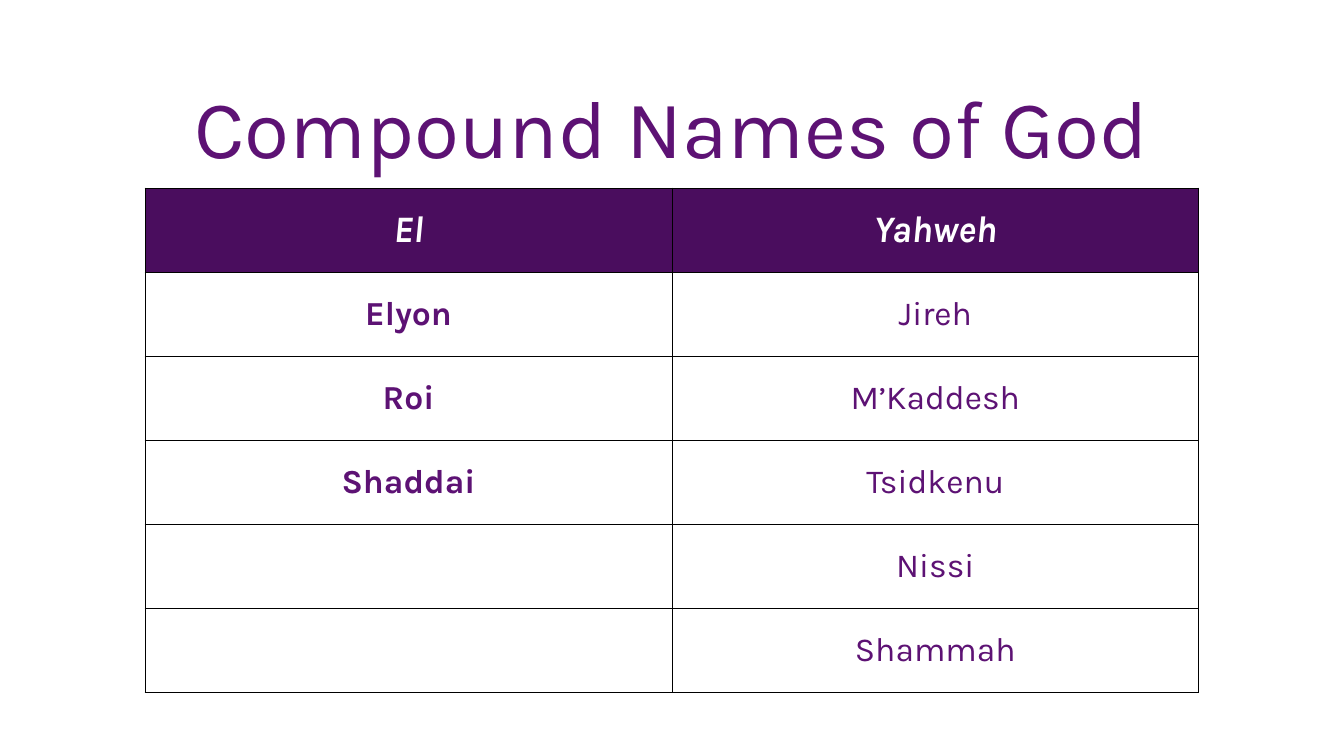
from lxml import etree
from pptx import Presentation
from pptx.dml.color import RGBColor
from pptx.enum.text import MSO_ANCHOR, PP_ALIGN
from pptx.oxml.ns import qn
from pptx.util import Inches, Pt

MID, CENTER = MSO_ANCHOR.MIDDLE, PP_ALIGN.CENTER
PURPLE = RGBColor(0x5D, 0x12, 0x74)
DARK = RGBColor(0x4A, 0x0D, 0x5E)
WHITE = RGBColor(0xFF, 0xFF, 0xFF)
BLACK = RGBColor(0, 0, 0)
FONT = "Karla"

# Slide (16:9) and table grid, in inches
WIDTH = 10
HEIGHT = WIDTH * 9 / 16
LEFT, TOP = 1.08, 1.4
COL, ROW = 3.92, HEIGHT / 9

NAMES = [
    ("El", "Yahweh"),
    ("Elyon", "Jireh"),
    ("Roi", "M’Kaddesh"),
    ("Shaddai", "Tsidkenu"),
    ("", "Nissi"),
    ("", "Shammah"),
]


def style(para, size, color, bold=False, italic=False):
    para.alignment = CENTER
    font = para.font
    font.name, font.size = FONT, Pt(size)
    font.bold, font.italic = bold, italic
    font.color.rgb = color


def add_title(slide, text):
    box = slide.shapes.add_textbox(
        Inches(0.05 * WIDTH), Inches(0.4), Inches(0.9 * WIDTH), Inches(1.17))
    frame = box.text_frame
    frame.word_wrap = True
    frame.vertical_anchor = MID
    para = frame.paragraphs[0]
    para.text = text
    para.line_spacing = 0.9
    style(para, 44, PURPLE)


def add_border(cell):
    props = cell._tc.get_or_add_tcPr()
    for place, side in enumerate(("lnL", "lnR", "lnT", "lnB")):
        line = etree.Element(qn(f"a:{side}"), w=str(Pt(0.5)))
        fill = etree.SubElement(line, qn("a:solidFill"))
        etree.SubElement(fill, qn("a:srgbClr"), val=str(BLACK))
        props.insert(place, line)


def fill_cell(cell, text, head, bold):
    cell.vertical_anchor = MID
    para = cell.text_frame.paragraphs[0]
    para.text = text
    if head:
        cell.fill.solid()
        cell.fill.fore_color.rgb = DARK
        style(para, 20, WHITE, True, True)
    else:
        cell.fill.background()
        style(para, 18, PURPLE, bold)
    add_border(cell)


def add_names(slide, rows):
    count = len(rows[0])
    table = slide.shapes.add_table(
        len(rows), count, Inches(LEFT), Inches(TOP),
        Inches(count * COL), Inches(len(rows) * ROW)).table
    table.horz_banding = False
    for col in table.columns:
        col.width = Inches(COL)
    for r, row in enumerate(rows):
        table.rows[r].height = Inches(ROW)
        for c, text in enumerate(row):
            fill_cell(table.cell(r, c), text, head=r == 0, bold=c == 0)


def main():
    deck = Presentation()
    deck.slide_width, deck.slide_height = Inches(WIDTH), Inches(HEIGHT)
    slide = deck.slides.add_slide(deck.slide_layouts[6])
    add_title(slide, "Compound Names of God")
    add_names(slide, NAMES)
    deck.save("out.pptx")


if __name__ == "__main__":
    main()
